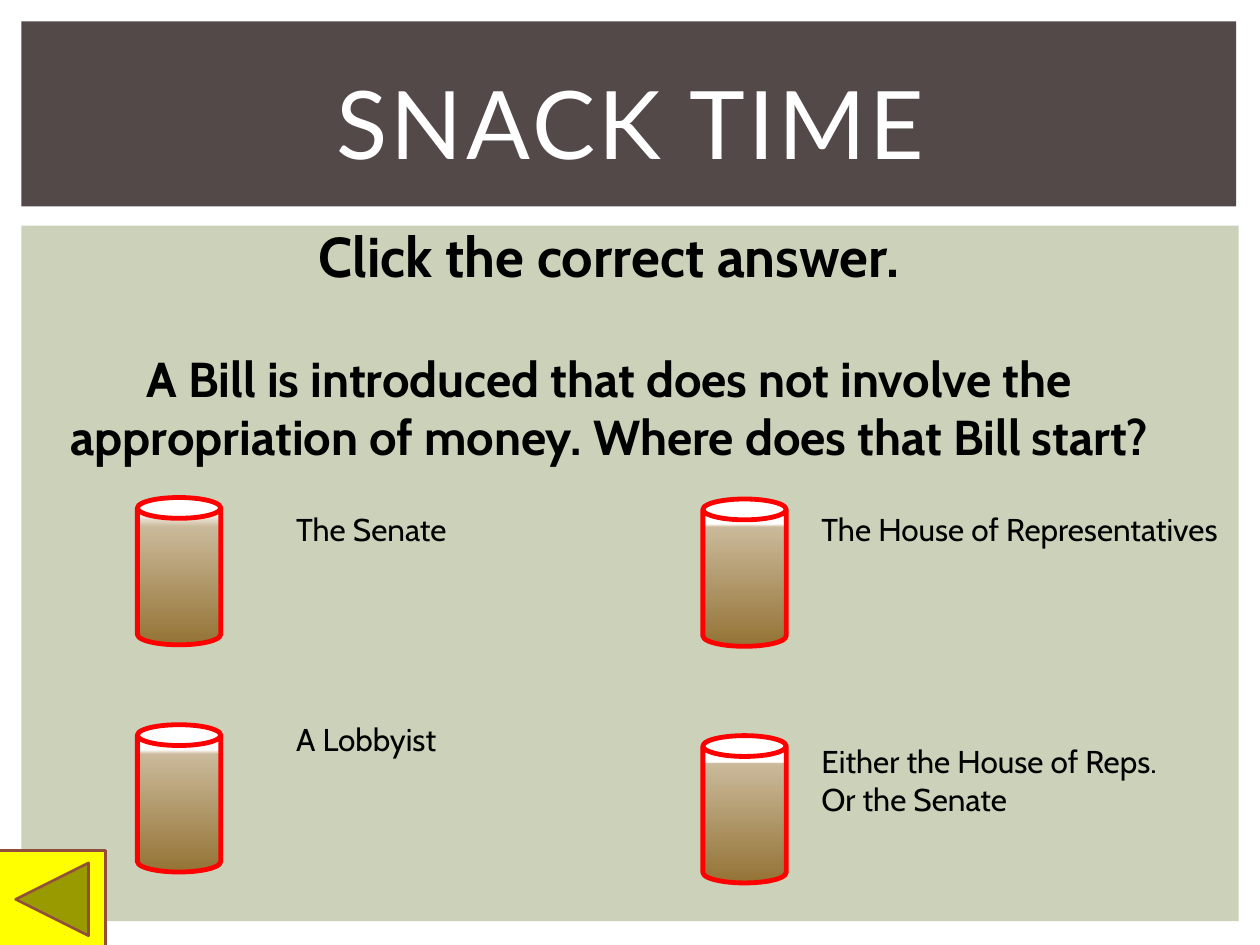
from dataclasses import dataclass

from lxml.etree import SubElement
from pptx import Presentation
from pptx.dml.color import RGBColor
from pptx.enum.shapes import MSO_SHAPE
from pptx.enum.text import MSO_ANCHOR, PP_ALIGN
from pptx.oxml.ns import qn
from pptx.util import Cm, Pt


@dataclass(frozen=True)
class Theme:
    panel: str = "CCD1B9"
    banner: str = "534949"
    title: str = "FFFFFF"
    text: str = "000000"
    foam: str = "FFFFFF"
    drink_top: str = "CAB99A"
    drink_bottom: str = "947335"
    glass: str = "FF0000"
    button: str = "FFFF00"
    button_edge: str = "924E3C"
    title_font: str = "Lato"
    body_font: str = "Cabin"
    title_size: int = 54
    prompt_size: int = 32
    question_size: int = 28
    answer_size: int = 18


THEME = Theme()


def add_block(slide, kind, box, fill=None, line=None, line_width=1.0):
    block = slide.shapes.add_shape(kind, *map(Cm, box))
    block.shadow.inherit = False
    if fill:
        block.fill.solid()
        block.fill.fore_color.rgb = RGBColor.from_string(fill)
    if line:
        block.line.color.rgb = RGBColor.from_string(line)
        block.line.width = Pt(line_width)
    else:
        block.line.fill.background()
    return block


def add_text(slide, box, paragraphs, font=THEME.body_font, color=THEME.text,
             bold=False, align=PP_ALIGN.LEFT, anchor=MSO_ANCHOR.TOP,
             spacing=0, gap=0):
    """Write (text, size) paragraphs; spacing and gap are in points."""
    frame = slide.shapes.add_textbox(*map(Cm, box)).text_frame
    frame.word_wrap = True
    frame.vertical_anchor = anchor
    for index, (text, size) in enumerate(paragraphs):
        paragraph = frame.add_paragraph() if index else frame.paragraphs[0]
        paragraph.alignment = align
        if index:
            paragraph.space_before = Pt(gap)
        run = paragraph.add_run()
        run.text = text
        run.font.name = font
        run.font.size = Pt(size)
        run.font.bold = bold
        run.font.color.rgb = RGBColor.from_string(color)
        if spacing:
            run.font._element.set("spc", str(spacing * 100))


def add_glass(slide, left, top, foam_end, drink_start):
    """Draw a can filled with a vertical foam-to-drink gradient."""
    glass = add_block(slide, MSO_SHAPE.CAN, (left, top, 1.68, 2.97),
                      line=THEME.glass, line_width=2.75)
    glass.fill.gradient()
    glass.fill.gradient_angle = 270
    stops = glass._element.spPr.find(qn("a:gradFill")).find(qn("a:gsLst"))
    for stop in list(stops):
        stops.remove(stop)
    for percent, color in ((foam_end, THEME.foam),
                           (drink_start, THEME.drink_top),
                           (100, THEME.drink_bottom)):
        stop = SubElement(stops, qn("a:gs"), pos=str(percent * 1000))
        SubElement(stop, qn("a:srgbClr"), val=color)


def main():
    deck = Presentation()
    deck.slide_width, deck.slide_height = Cm(25.4), Cm(19.05)
    slide = deck.slides.add_slide(deck.slide_layouts[6])

    # Background panels
    add_block(slide, MSO_SHAPE.RECTANGLE, (0.43, 4.55, 24.54, 14.02), THEME.panel)
    add_block(slide, MSO_SHAPE.RECTANGLE, (0.43, 0.43, 24.49, 3.73), THEME.banner)

    # Title and question
    add_text(slide, (1.07, 0.99, 23.29, 2.92), [("SNACK TIME", THEME.title_size)],
             font=THEME.title_font, color=THEME.title, align=PP_ALIGN.CENTER,
             anchor=MSO_ANCHOR.MIDDLE, spacing=2)
    add_text(slide, (0.2, 4.34, 24.16, 5.21),
             [("Click the correct answer.", THEME.prompt_size),
              ("A Bill is introduced that does not involve the appropriation "
               "of money. Where does that Bill start?", THEME.question_size)],
             bold=True, align=PP_ALIGN.CENTER, gap=34)

    # Glasses: left, top, end of foam, start of drink
    left_glass, right_glass = 2.77, 14.17
    for glass in ((left_glass, 10.03, 10, 20), (left_glass, 14.61, 17, 20),
                  (right_glass, 14.83, 18, 19), (right_glass, 10.06, 17, 19)):
        add_glass(slide, *glass)

    # Answers
    left_answer, right_answer = 5.72, 16.31
    for answer, box in (
            ("The Senate", (left_answer, 10.16, 5.51, 1.02)),
            ("The House of Representatives", (right_answer, 10.16, 8.69, 1.02)),
            ("A Lobbyist", (left_answer, 14.4, 6.55, 1.02)),
            ("Either the House of Reps. Or the Senate",
             (right_answer, 14.83, 8.05, 1.8))):
        add_text(slide, box, [(answer, THEME.answer_size)])

    # Back button
    add_block(slide, MSO_SHAPE.ACTION_BUTTON_BACK_OR_PREVIOUS,
              (-0.03, 17.15, 2.16, 1.96), THEME.button, THEME.button_edge, 1.5)

    deck.save("out.pptx")


if __name__ == "__main__":
    main()
